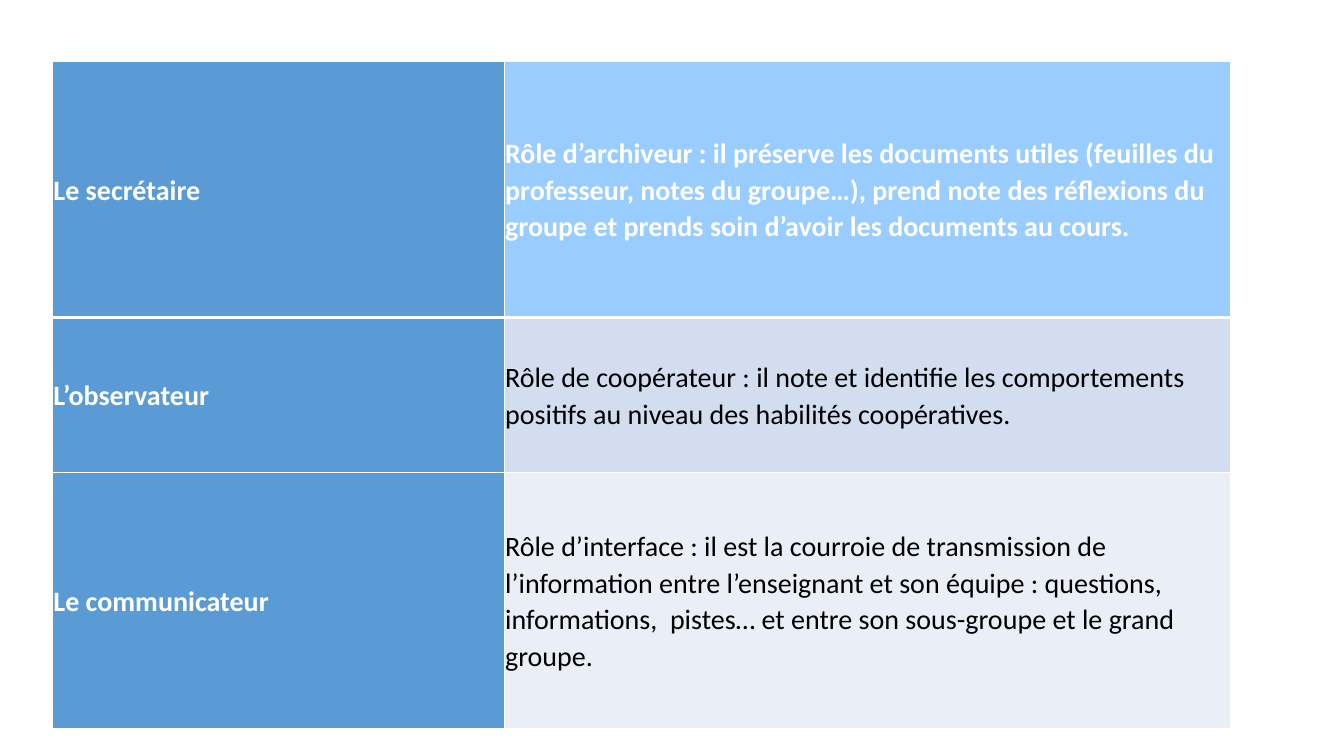
from lxml import etree
from pptx import Presentation
from pptx.dml.color import RGBColor
from pptx.enum.text import MSO_ANCHOR
from pptx.oxml.ns import qn
from pptx.util import Inches, Pt

MIDDLE = MSO_ANCHOR.MIDDLE
COLORS = {
    "white": "FFFFFF",
    "black": "000000",
    "role": "5B9BD5",
    "first": "99CCFF",
    "band": "D2DEEF",
    "light": "EAEFF7",
}
COLUMN_WIDTHS = [4.48, 7.21]
ROW_HEIGHTS = [2.54, 1.54, 2.54]
ROLES = [
    ("Le secrétaire",
     "Rôle d’archiveur : il préserve les documents utiles (feuilles du professeur, "
     "notes du groupe…), prend note des réflexions du groupe et prends soin d’avoir "
     "les documents au cours.", "first"),
    ("L’observateur",
     "Rôle de coopérateur : il note et identifie les comportements positifs au niveau "
     "des habilités coopératives.", "band"),
    ("Le communicateur",
     "Rôle d’interface : il est la courroie de transmission de l’information entre "
     "l’enseignant et son équipe : questions, informations,  pistes… et entre son "
     "sous-groupe et le grand groupe.", "light"),
]


class RolePage:
    font_name = "Calibri"
    font_size = Pt(20)
    line_spacing = 1.07
    margin = Inches(0.01)

    def __init__(self, deck):
        self.page = deck.slides.add_slide(deck.slide_layouts[6])

    def color(self, name):
        return RGBColor.from_string(COLORS[name])

    def borders(self, cell, widths):
        properties = cell._tc.get_or_add_tcPr()
        for position, side in enumerate("LRTB"):
            line = etree.Element(qn(f"a:ln{side}"), w=str(Pt(widths.get(side, 1))))
            fill = etree.SubElement(line, qn("a:solidFill"))
            etree.SubElement(fill, qn("a:srgbClr"), val=COLORS["white"])
            properties.insert(position, line)

    def cell(self, cell, text, fill, color, bold, widths):
        cell.fill.solid()
        cell.fill.fore_color.rgb = self.color(fill)
        cell.vertical_anchor = MIDDLE
        cell.margin_left = cell.margin_right = self.margin
        cell.margin_top = cell.margin_bottom = self.margin
        para = cell.text_frame.paragraphs[0]
        para.text = text
        para.line_spacing = self.line_spacing
        para.font.name = self.font_name
        para.font.size = self.font_size
        para.font.bold = bold
        para.font.color.rgb = self.color(color)
        self.borders(cell, widths)

    def table(self, left, top):
        table = self.page.shapes.add_table(
            len(ROW_HEIGHTS), len(COLUMN_WIDTHS), Inches(left), Inches(top),
            Inches(sum(COLUMN_WIDTHS)), Inches(sum(ROW_HEIGHTS))).table
        for column, width in zip(table.columns, COLUMN_WIDTHS):
            column.width = Inches(width)
        for row, height in zip(table.rows, ROW_HEIGHTS):
            row.height = Inches(height)
        thick_sides = [{"B": 3}, {"T": 3}, {}]
        for index, (role, duty, fill) in enumerate(ROLES):
            header = index == 0
            widths = thick_sides[index]
            self.cell(table.cell(index, 0), role, "role", "white", True, widths)
            self.cell(table.cell(index, 1), duty, fill,
                      "white" if header else "black", header, widths)


def main():
    deck = Presentation()
    deck.slide_width = Inches(13.33)
    deck.slide_height = Inches(7.5)
    RolePage(deck).table(0.52, 0.61)
    deck.save("out.pptx")


if __name__ == "__main__":
    main()
